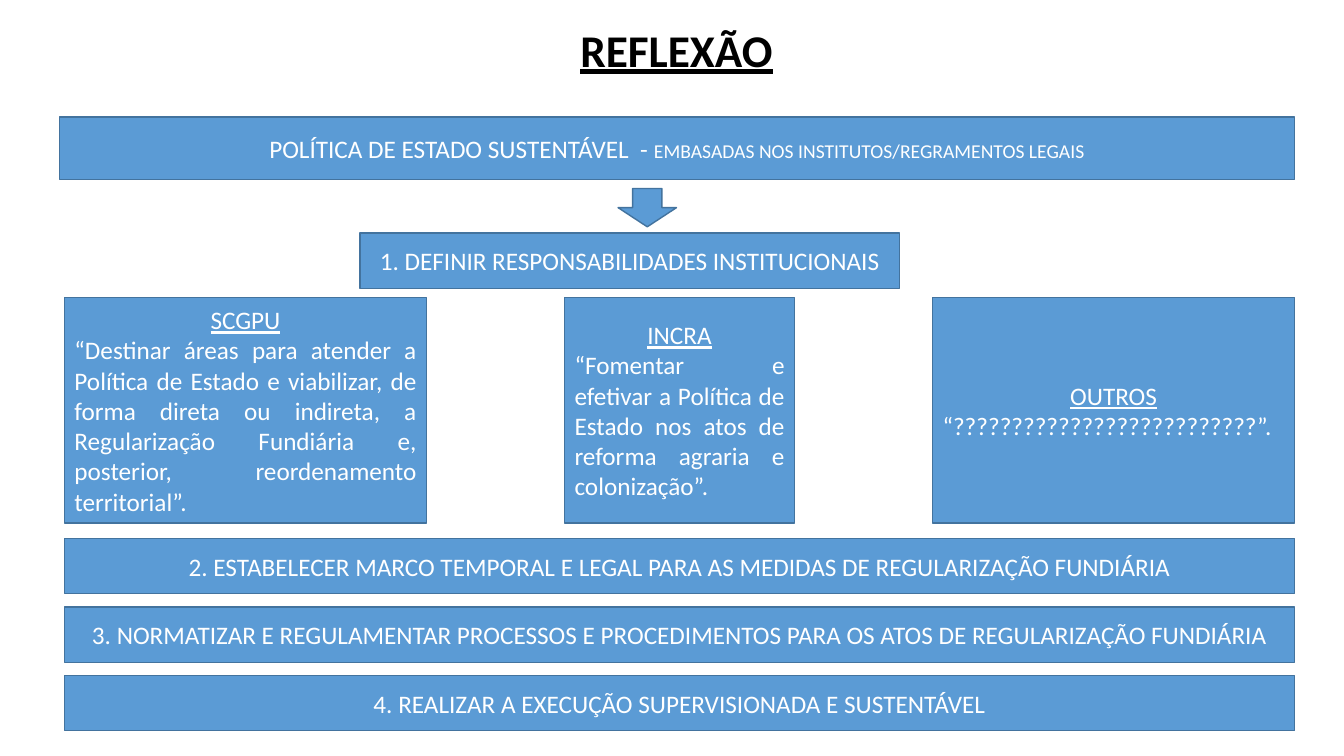
from pptx import Presentation
from pptx.dml.color import RGBColor
from pptx.enum.shapes import MSO_SHAPE as SHAPE
from pptx.enum.text import MSO_ANCHOR as ANCHOR, MSO_AUTO_SIZE as AUTOSIZE, PP_ALIGN as ALIGN
from pptx.util import Inches, Pt

COLORS = {"title": "000000", "fill": "5B9BD5", "line": "43739E", "text": "FFFFFF"}


class SlideBuilder:
    """Holds the style and the current slide."""

    font = "Calibri"
    size = 18

    def __init__(self, prs):
        self.slide = prs.slides.add_slide(prs.slide_layouts[5])

    def color(self, name):
        return RGBColor.from_string(COLORS[name])

    def style(self, r, size=None, color="text", bold=False, underline=False):
        r.font.name = self.font
        r.font.size = Pt(size or self.size)
        r.font.color.rgb = self.color(color)
        r.font.bold = bold
        r.font.underline = underline

    def title(self, text, x, y, w, h):
        sp = self.slide.shapes.title
        sp.left, sp.top, sp.width, sp.height = map(Inches, (x, y, w, h))
        tf = sp.text_frame
        tf.text = text
        tf.auto_size = AUTOSIZE.NONE
        tf.vertical_anchor = ANCHOR.MIDDLE
        p = tf.paragraphs[0]
        p.alignment = ALIGN.CENTER
        p.line_spacing = 0.9
        self.style(p.runs[0], 32.4, "title", bold=True, underline=True)

    def shape(self, kind, x, y, w, h):
        sp = self.slide.shapes.add_shape(kind, *map(Inches, (x, y, w, h)))
        sp.shadow.inherit = False
        sp.fill.solid()
        sp.fill.fore_color.rgb = self.color("fill")
        sp.line.color.rgb = self.color("line")
        sp.line.width = Pt(1)
        return sp

    def box(self, text, x, y, w, h):
        sp = self.shape(SHAPE.RECTANGLE, x, y, w, h)
        tf = sp.text_frame
        tf.word_wrap = True
        tf.vertical_anchor = ANCHOR.MIDDLE
        tf.text = text
        p = tf.paragraphs[0]
        p.alignment = ALIGN.CENTER
        self.style(p.runs[0])
        return p

    def banner(self, text, detail, x, y, w, h):
        p = self.box(text, x, y, w, h)
        r = p.add_run()
        r.text = detail
        self.style(r, 14)

    def card(self, heading, body, x, y, w, h):
        p = self.box(f"{heading}\n{body}", x, y, w, h)
        p.runs[0].font.underline = True
        body_p = p._parent.paragraphs[1]
        body_p.alignment = ALIGN.JUSTIFY
        self.style(body_p.runs[0])


def main():
    prs = Presentation()
    prs.slide_width, prs.slide_height = Inches(13.33), Inches(7.5)
    s = SlideBuilder(prs)

    # Title and overall policy
    s.title("REFLEXÃO", 0.45, 0.26, 12.52, 0.52)
    s.banner("POLÍTICA DE ESTADO SUSTENTÁVEL  - ",
             "EMBASADAS NOS INSTITUTOS/REGRAMENTOS LEGAIS", 0.59, 1.16, 12.25, 0.62)
    s.shape(SHAPE.DOWN_ARROW, 6.13, 1.87, 0.58, 0.38)

    # Step 1 and the institutions, evenly spaced
    left, step_h = 0.64, 0.55
    s.box("1. DEFINIR RESPONSABILIDADES INSTITUCIONAIS", 3.57, 2.31, 5.35, step_h)
    institutions = [
        ("SCGPU", "“Destinar áreas para atender a Política de Estado e viabilizar, de forma "
                  "direta ou indireta, a Regularização Fundiária e, posterior, "
                  "reordenamento territorial”.", 3.59),
        ("INCRA", "“Fomentar e efetivar a Política de Estado nos atos de reforma agraria "
                  "e colonização”.", 2.28),
        ("OUTROS", "“??????????????????????????”.", 3.59),
    ]
    x, gap = left, 1.37
    for heading, body, w in institutions:
        s.card(heading, body, x, 2.95, w, 2.24)
        x += w + gap

    # Steps 2 to 4
    steps = [
        "2. ESTABELECER MARCO TEMPORAL E LEGAL PARA AS MEDIDAS DE REGULARIZAÇÃO FUNDIÁRIA",
        "3. NORMATIZAR E REGULAMENTAR PROCESSOS E PROCEDIMENTOS PARA OS ATOS DE "
        "REGULARIZAÇÃO FUNDIÁRIA",
        "4. REALIZAR A EXECUÇÃO SUPERVISIONADA E SUSTENTÁVEL",
    ]
    for i, text in enumerate(steps):
        s.box(text, left, 5.34 + 0.68 * i, 12.2, step_h)

    prs.save("out.pptx")


if __name__ == "__main__":
    main()
